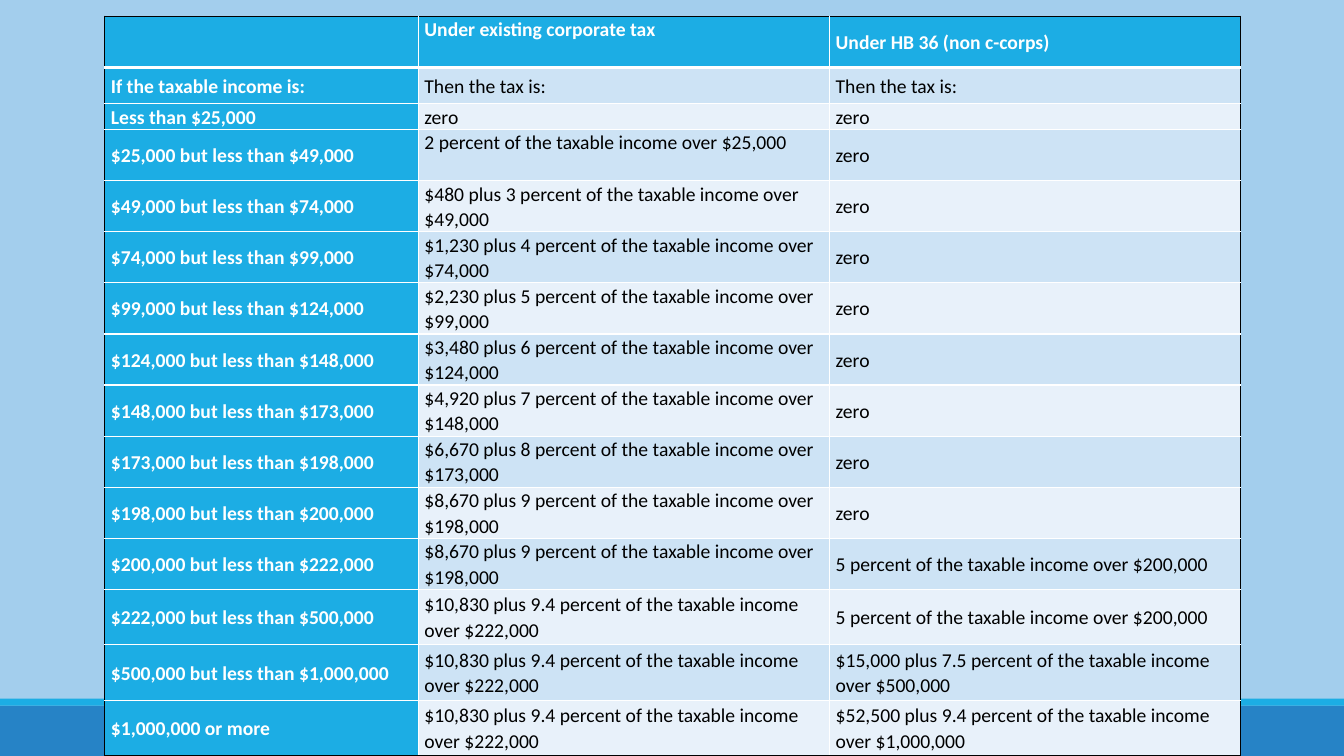
from lxml.etree import SubElement
from pptx import Presentation
from pptx.dml.color import RGBColor
from pptx.enum.shapes import MSO_SHAPE
from pptx.enum.text import MSO_ANCHOR
from pptx.oxml.ns import qn
from pptx.util import Inches, Pt

HUES = {"sky": "A3CEED", "base": "2683C6", "head": "1CADE4", "odd": "CDE3F5",
        "even": "E8F1FA", "white": "FFFFFF", "black": "000000"}

# Income bracket, existing corporate tax, tax under HB 36
TOP = "$10,830 plus 9.4 percent of the taxable income over $222,000"
NINE = "$8,670 plus 9 percent of the taxable income over $198,000"
FIVE = "5 percent of the taxable income over $200,000"
ROWS = [
    ("", "Under existing corporate tax", "Under HB 36 (non c-corps)"),
    ("If the taxable income is:", "Then the tax is:", "Then the tax is:"),
    ("Less than $25,000", "zero", "zero"),
    ("$25,000 but less than $49,000", "2 percent of the taxable income over $25,000", "zero"),
    ("$49,000 but less than $74,000", "$480 plus 3 percent of the taxable income over $49,000", "zero"),
    ("$74,000 but less than $99,000", "$1,230 plus 4 percent of the taxable income over $74,000", "zero"),
    ("$99,000 but less than $124,000", "$2,230 plus 5 percent of the taxable income over $99,000", "zero"),
    ("$124,000 but less than $148,000", "$3,480 plus 6 percent of the taxable income over $124,000", "zero"),
    ("$148,000 but less than $173,000", "$4,920 plus 7 percent of the taxable income over $148,000", "zero"),
    ("$173,000 but less than $198,000", "$6,670 plus 8 percent of the taxable income over $173,000", "zero"),
    ("$198,000 but less than $200,000", NINE, "zero"),
    ("$200,000 but less than $222,000", NINE, FIVE),
    ("$222,000 but less than $500,000", TOP, FIVE),
    ("$500,000 but less than $1,000,000", TOP, "$15,000 plus 7.5 percent of the taxable income over $500,000"),
    ("$1,000,000 or more", TOP, "$52,500 plus 9.4 percent of the taxable income over $1,000,000"),
]
# Percent of the slide's width and height
WIDE = [23.33, 30.6, 30.6]
HIGH = [6.8, 4.8, 3.33, 6.8] + [6.67] * 8 + [7.33] * 3
RAISED = {(0, 1), (3, 1)}  # cells whose text sits at the top


def tint(name):
    return RGBColor.from_string(HUES[name])


def write(frame, text, hue="black", bold=False, size=14, font="Calibri", lead=1.07):
    para = frame.paragraphs[0]
    para.line_spacing = lead
    run = para.add_run()
    run.text = text
    face = run.font
    face.name, face.size, face.bold = font, Pt(size), bold
    face.color.rgb = tint(hue)


class Deck:
    def __init__(self, wide=13.33, high=7.5):
        self.show = Presentation()
        self.show.slide_width, self.show.slide_height = Inches(wide), Inches(high)
        self.slide = self.show.slides.add_slide(self.show.slide_layouts[6])

    def across(self, share):
        return round(self.show.slide_width * share / 100)

    def down(self, share):
        return round(self.show.slide_height * share / 100)

    def ground(self, hue):
        fill = self.slide.background.fill
        fill.solid()
        fill.fore_color.rgb = tint(hue)

    def band(self, top, high, hue):
        bar = self.slide.shapes.add_shape(
            MSO_SHAPE.RECTANGLE, 0, self.down(top), self.across(100), self.down(high))
        bar.shadow.inherit = False
        bar.fill.solid()
        bar.fill.fore_color.rgb = tint(hue)
        bar.line.fill.background()

    def edge(self, cell, side, hue, width=1):
        props = cell._tc.get_or_add_tcPr()
        line = SubElement(props, qn(f"a:ln{side}"), w=str(Pt(width)))
        fill = SubElement(line, qn("a:solidFill"))
        SubElement(fill, qn("a:srgbClr"), val=HUES[hue])

    def cell(self, cell, text, fill, raised, edges, **form):
        cell.margin_left = cell.margin_right = Inches(0.06)
        cell.margin_top = cell.margin_bottom = 0
        cell.vertical_anchor = MSO_ANCHOR.TOP if raised else MSO_ANCHOR.MIDDLE
        for side, style in edges.items():
            self.edge(cell, side, *style)
        cell.fill.solid()
        cell.fill.fore_color.rgb = tint(fill)
        if text:
            write(cell.text_frame, text, **form)

    def table(self, left, top, rows, wide, high):
        grid = self.slide.shapes.add_table(
            len(rows), len(wide), self.across(left), self.down(top),
            self.across(sum(wide)), self.down(sum(high))).table
        for col, share in zip(grid.columns, wide):
            col.width = self.across(share)
        for row, share in zip(grid.rows, high):
            row.height = self.down(share)
        end, last = len(rows) - 1, len(wide) - 1
        for r, row in enumerate(rows):
            for c, text in enumerate(row):
                # Black frame outside, white rules inside, a thick one by the header
                outer = {"L": c == 0, "R": c == last, "T": r == 0, "B": r == end}
                edges = {side: ("black" if out else "white",
                                3 if (side, r) in {("B", 0), ("T", 1)} else 1)
                         for side, out in outer.items()}
                head = r == 0 or c == 0
                fill = "head" if head else "odd" if r % 2 else "even"
                self.cell(grid.cell(r, c), text, fill, (r, c) in RAISED, edges,
                          hue="white" if head else "black", bold=head)


def main():
    deck = Deck()
    # Backdrop
    deck.ground("sky")
    deck.band(93.33, 6.67, "base")
    deck.band(92.4, 0.93, "head")
    # Tax comparison
    deck.table(7.8, 2.13, ROWS, WIDE, HIGH)
    deck.show.save("out.pptx")


if __name__ == "__main__":
    main()
